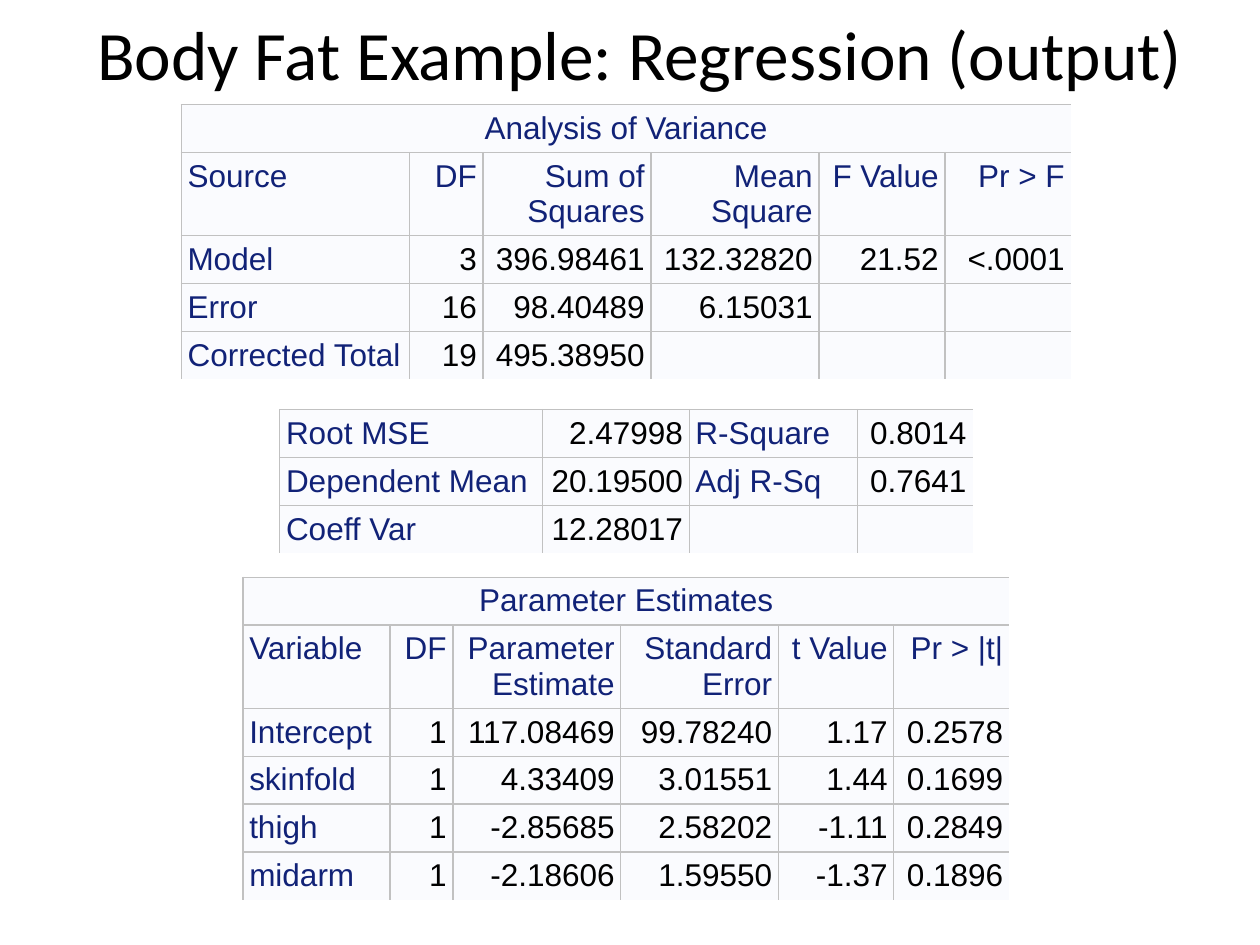
from lxml.etree import SubElement
from pptx import Presentation
from pptx.dml.color import RGBColor
from pptx.enum.text import MSO_ANCHOR, PP_ALIGN
from pptx.oxml.ns import qn
from pptx.util import Inches, Pt

NAVY = RGBColor(0x11, 0x22, 0x77)
BLACK = RGBColor(0, 0, 0)
PALE = RGBColor(0xFA, 0xFB, 0xFE)
GREY = RGBColor(0xC1, 0xC1, 0xC1)

UNIT = 1 / 12  # column widths are counted in twelfths of an inch
CENTRE = 4.97  # shared vertical axis of the three tables
LINE_HEIGHT = 0.28
PADDING = 0.05

VARIANCE = [
    ["Analysis of Variance"],
    ["Source", "DF", "Sum of\vSquares", "Mean\vSquare", "F Value", "Pr > F"],
    ["Model", "3", "396.98461", "132.32820", "21.52", "<.0001"],
    ["Error", "16", "98.40489", "6.15031", "", ""],
    ["Corrected Total", "19", "495.38950", "", "", ""],
]
FIT = [
    ["Root MSE", "2.47998", "R-Square", "0.8014"],
    ["Dependent Mean", "20.19500", "Adj R-Sq", "0.7641"],
    ["Coeff Var", "12.28017", "", ""],
]
ESTIMATES = [
    ["Parameter Estimates"],
    ["Variable", "DF", "Parameter\vEstimate", "Standard\vError", "t Value", "Pr > |t|"],
    ["Intercept", "1", "117.08469", "99.78240", "1.17", "0.2578"],
    ["skinfold", "1", "4.33409", "3.01551", "1.44", "0.1699"],
    ["thigh", "1", "-2.85685", "2.58202", "-1.11", "0.2849"],
    ["midarm", "1", "-2.18606", "1.59550", "-1.37", "0.1896"],
]


def add_title(slide, text):
    title = slide.shapes.title
    title.left, title.top = Inches(0.58), Inches(0)
    title.width, title.height = Inches(9), Inches(0.83)
    frame = title.text_frame
    frame.text = text
    frame.vertical_anchor = MSO_ANCHOR.MIDDLE
    heading = frame.paragraphs[0]
    heading.alignment = PP_ALIGN.CENTER
    heading.font.name = "Calibri"
    heading.font.size = Pt(39.6)
    heading.font.color.rgb = BLACK


def set_borders(cell, last_column, last_row):
    """Rule every edge except the table's outer right and bottom."""
    hidden = {"R": last_column, "B": last_row}
    properties = cell._tc.get_or_add_tcPr()
    for side in "LRTB":
        edge = SubElement(properties, qn(f"a:ln{side}"), w=str(Pt(0.75)))
        if hidden.get(side):
            SubElement(edge, qn("a:noFill"))
        else:
            fill = SubElement(edge, qn("a:solidFill"))
            SubElement(fill, qn("a:srgbClr"), val=str(GREY))


def fill_cell(cell, text, alignment):
    """Write the text, navy for labels and black for figures."""
    cell.margin_left = cell.margin_right = Inches(PADDING)
    cell.margin_top = cell.margin_bottom = Inches(PADDING)
    cell.fill.solid()
    cell.fill.fore_color.rgb = PALE
    cell.text = text
    entry = cell.text_frame.paragraphs[0]
    entry.alignment = alignment
    entry.font.name = "Arial"
    entry.font.size = Pt(18)
    entry.font.bold = False
    entry.font.color.rgb = NAVY if text[:1].isalpha() else BLACK


def add_results(slide, top, column_units, rows, label_columns=(0,)):
    """Add a centred table; a one-entry row becomes a heading across it."""
    widths = [units * UNIT for units in column_units]
    heights = [
        2 * PADDING + LINE_HEIGHT * (1 + max(text.count("\v") for text in row))
        for row in rows
    ]
    table = slide.shapes.add_table(
        len(rows), len(widths),
        Inches(CENTRE - sum(widths) / 2), Inches(top),
        Inches(sum(widths)), Inches(sum(heights)),
    ).table
    table.first_row = table.horz_banding = False
    for column, width in zip(table.columns, widths):
        column.width = Inches(width)

    last_column, last_row = len(widths) - 1, len(rows) - 1
    for r, (row, height) in enumerate(zip(rows, heights)):
        table.rows[r].height = Inches(height)
        is_heading = len(row) == 1
        for c in range(len(widths)):
            set_borders(table.cell(r, c), is_heading or c == last_column, r == last_row)
        if is_heading:
            table.cell(r, 0).merge(table.cell(r, last_column))
            fill_cell(table.cell(r, 0), row[0], PP_ALIGN.CENTER)
            continue
        for c, text in enumerate(row):
            alignment = PP_ALIGN.LEFT if c in label_columns else PP_ALIGN.RIGHT
            fill_cell(table.cell(r, c), text, alignment)


def main():
    deck = Presentation()
    deck.slide_width, deck.slide_height = Inches(10), Inches(7.5)
    slide = deck.slides.add_slide(deck.slide_layouts.get_by_name("Title Only"))
    add_title(slide, "Body Fat Example: Regression (output)")
    add_results(slide, 0.83, [21.75, 7, 16, 16, 12, 12], VARIANCE)
    add_results(slide, 3.25, [25, 14, 16, 11], FIT, label_columns=(0, 2))
    add_results(slide, 4.58, [14, 6, 16, 15, 11, 11], ESTIMATES)
    deck.save("out.pptx")


if __name__ == "__main__":
    main()
